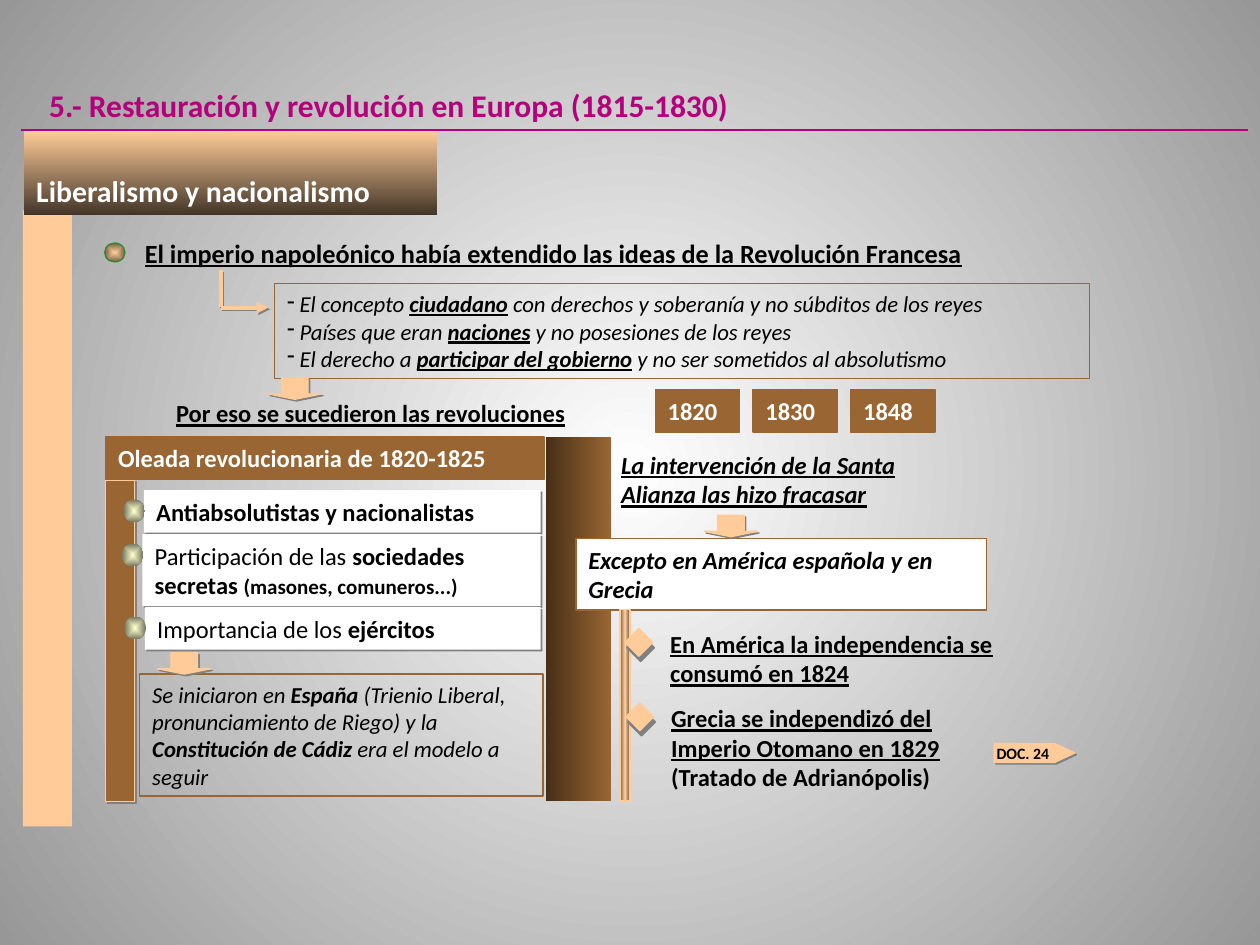
from lxml import etree
from pptx import Presentation
from pptx.dml.color import RGBColor
from pptx.enum.shapes import MSO_CONNECTOR, MSO_SHAPE
from pptx.enum.text import MSO_ANCHOR, PP_ALIGN
from pptx.oxml.ns import qn
from pptx.util import Cm, Pt

RECT, OVAL, DIAMOND = MSO_SHAPE.RECTANGLE, MSO_SHAPE.OVAL, MSO_SHAPE.DIAMOND
DOWN_ARROW, PENTAGON = MSO_SHAPE.DOWN_ARROW, MSO_SHAPE.PENTAGON
STRAIGHT = MSO_CONNECTOR.STRAIGHT
TOP, BOTTOM, LEFT = MSO_ANCHOR.TOP, MSO_ANCHOR.BOTTOM, PP_ALIGN.LEFT

COLORS = {
    "black": "000000", "white": "FFFFFF", "gray": "979797", "shadow": "808080",
    "peach": "FFCC99", "brown": "996633", "magenta": "B4007C", "green": "2E8A2E",
    "cream": "FFFFCC", "olive": "75755E", "tan": "755E46", "coffee": "423528",
    "umber": "462F17",
}
SOFT = (1.4, 45)
DEEP = (3.2, 72)


def add(parent, tag, **attributes):
    """Append a child element with the given attributes."""
    return etree.SubElement(parent, qn(tag), {key: str(value) for key, value in attributes.items()})


class SlideBuilder:
    """Draw styled elements on the current slide."""

    font_name = "Calibri"

    def __init__(self, slide):
        self.slide = slide

    def color(self, name):
        """Return the named colour."""
        return RGBColor.from_string(COLORS[name])

    def gradient(self, fill, holder, names, angle=None, shade="shape"):
        """Fill with evenly spaced stops, linear or from the centre."""
        fill.gradient()
        grad = next(holder.iter(qn("a:gradFill")))
        for child in list(grad):
            grad.remove(child)
        stops = add(grad, "a:gsLst")
        for index, name in enumerate(names):
            stop = add(stops, "a:gs", pos=100000 * index // (len(names) - 1))
            add(stop, "a:srgbClr", val=COLORS[name])
        if angle is None:
            center = add(grad, "a:path", path=shade)
            add(center, "a:fillToRect", l=50000, t=50000, r=50000, b=50000)
        else:
            add(grad, "a:lin", ang=angle * 60000, scaled=0)

    def background(self, *names):
        """Fill the slide with a round gradient."""
        self.gradient(self.slide.background.fill, self.slide.element, names, shade="circle")

    def cast_shadow(self, effects, shadow):
        """Add a hard shadow with a distance and an angle."""
        distance, angle = shadow
        outer = add(effects, "a:outerShdw", blurRad=0, dist=int(Pt(distance)),
                    dir=angle * 60000, algn="ctr", rotWithShape=0)
        add(outer, "a:srgbClr", val=COLORS["shadow"])

    def shape(self, kind, left, top, width, height, fill=None, line=None, shadow=None, angle=None):
        """Draw a preset shape; a tuple of colours makes a gradient."""
        shape = self.slide.shapes.add_shape(kind, Cm(left), Cm(top), Cm(width), Cm(height))
        properties = shape.element.spPr
        if fill is None:
            shape.fill.background()
        elif isinstance(fill, tuple):
            self.gradient(shape.fill, properties, fill, angle)
        else:
            shape.fill.solid()
            shape.fill.fore_color.rgb = self.color(fill)
        if line:
            shape.line.color.rgb = self.color(line)
            shape.line.width = Pt(0.75)
        else:
            shape.line.fill.background()
        shape.shadow.inherit = False
        if shadow:
            self.cast_shadow(properties.find(qn("a:effectLst")), shadow)
        return shape

    def line(self, start, end, color, width, arrow=False, shadow=None):
        """Draw a straight line."""
        points = [Cm(value) for value in (*start, *end)]
        line = self.slide.shapes.add_connector(STRAIGHT, *points)
        line.line.color.rgb = self.color(color)
        line.line.width = Pt(width)
        properties = line.element.spPr
        if arrow:
            add(properties.find(qn("a:ln")), "a:tailEnd", type="triangle")
        effects = add(properties, "a:effectLst")
        if shadow:
            self.cast_shadow(effects, shadow)

    def text(self, left, top, width, height, content, size, style="b", color="black"):
        """Place a text box."""
        box = self.slide.shapes.add_textbox(Cm(left), Cm(top), Cm(width), Cm(height))
        self.fill_text(box, [content], size, style, color)

    def fill_text(self, box, paragraphs, size, style="", color="black", anchor=TOP, dash=False):
        """Set paragraphs, each a string or a list of (text, style, size) spans."""
        frame = box.text_frame
        frame.word_wrap = True
        frame.vertical_anchor = anchor
        frame.margin_left, frame.margin_right = Cm(0.25), Cm(0.05)
        frame.margin_top = frame.margin_bottom = Cm(0.13)
        for index, content in enumerate(paragraphs):
            para = frame.add_paragraph() if index else frame.paragraphs[0]
            para.alignment = LEFT
            font = para.font
            font.name, font.size = self.font_name, Pt(size)
            font.color.rgb = self.color(color)
            self.emphasize(font, style)
            if dash:
                indent = font._element.getparent()
                indent.set("marL", str(int(Cm(0.25))))
                indent.set("indent", str(-int(Cm(0.25))))
                indent.insert(0, etree.Element(qn("a:buChar"), {"char": "-"}))
            spans = [(content, "")] if isinstance(content, str) else content
            for words, emphasis, *own_size in spans:
                span = para.add_run()
                span.text = words
                self.emphasize(span.font, emphasis)
                if own_size:
                    span.font.size = Pt(own_size[0])

    def emphasize(self, font, style):
        """Apply b, i and u to a font."""
        if "b" in style:
            font.bold = True
        if "i" in style:
            font.italic = True
        if "u" in style:
            font.underline = True


def main():
    """Build the slide and save it."""
    deck = Presentation()
    deck.slide_width, deck.slide_height = Cm(25.4), Cm(19.05)
    page = SlideBuilder(deck.slides.add_slide(deck.slide_layouts[6]))
    page.background("white", "gray")

    page.shape(RECT, 0.46, 4.24, 0.99, 12.42, "peach")
    topic = page.shape(RECT, 0.48, 2.64, 8.33, 1.7, ("peach", "coffee"), angle=90)
    page.fill_text(topic, ["Liberalismo y nacionalismo"], 17, "b", "white", BOTTOM)
    page.line((0.43, 2.62), (25.15, 2.62), "magenta", 0.75)
    page.text(0.74, 1.6, 17.09, 1.02,
              "5.- Restauración y revolución en Europa (1815-1830)", 18, "b", "magenta")

    page.shape(OVAL, 2.11, 4.9, 0.41, 0.38, ("peach", "tan"), "green")
    page.text(2.67, 4.65, 19.69, 0.89,
              "El imperio napoleónico había extendido las ideas de la Revolución Francesa", 15, "bu")
    ideas = page.shape(RECT, 5.54, 5.72, 16.43, 1.91, line="brown")
    page.fill_text(ideas, [
        [("El concepto ", ""), ("ciudadano", "bu"),
         (" con derechos y soberanía y no súbditos de los reyes", "")],
        [("Países que eran ", ""), ("naciones", "bu"), (" y no posesiones de los reyes", "")],
        [("El derecho a ", ""), ("participar del gobierno", "bu"),
         (" y no ser sometidos al absolutismo", "")],
    ], 13, "i", dash=True)
    page.line((4.45, 5.44), (4.45, 6.18), "peach", 2.25, shadow=SOFT)
    page.line((4.45, 6.2), (5.41, 6.2), "peach", 2.25, arrow=True, shadow=SOFT)
    page.text(3.3, 7.9, 9.6, 0.86, "Por eso se sucedieron las revoluciones", 14, "bu")
    for index, year in enumerate(("1820", "1830", "1848")):
        tile = page.shape(RECT, 13.21 + 1.97 * index, 7.85, 1.7, 0.86, "brown", "brown")
        page.fill_text(tile, [year], 14, "b", "white")

    page.shape(RECT, 2.13, 9.68, 0.58, 6.48, "brown", "peach", SOFT)
    wave = page.shape(RECT, 2.13, 8.81, 8.84, 0.86, "brown", "brown")
    page.fill_text(wave, ["Oleada revolucionaria de 1820-1825"], 14, "b", "white")
    features = (
        (2.9, 9.88, 0.86, [("Antiabsolutistas y nacionalistas", "b")]),
        (2.87, 10.77, 1.45, [("Participación de las", ""), (" sociedades secretas ", "b"),
                             ("(masones, comuneros...)", "b", 12)]),
        (2.92, 12.24, 0.86, [("Importancia de los", ""), (" ejércitos", "b")]),
    )
    for left, top, height, spans in features:
        panel = page.shape(RECT, left, top, 10.9 - left, height, "white", shadow=SOFT)
        page.fill_text(panel, [spans], 14)
        page.shape(OVAL, left - 0.41, top + 0.19, 0.43, 0.46, ("cream", "olive"))
    spain = page.shape(RECT, 2.82, 13.59, 8.13, 2.46, line="brown")
    page.fill_text(spain, [[
        ("Se iniciaron en ", ""), ("España ", "b"),
        ("(Trienio Liberal, pronunciamiento de Riego) y la ", ""),
        ("Constitución de Cádiz", "b"), (" era el modelo a seguir", ""),
    ]], 13, "i")

    page.text(12.27, 8.94, 7.01, 1.45,
              "La intervención de la Santa Alianza las hizo fracasar", 14, "biu")
    page.shape(RECT, 11, 8.81, 1.32, 7.34, ("brown", "umber"), angle=180)
    exception = page.shape(RECT, 11.61, 10.85, 8.28, 1.45, "white", "brown")
    page.fill_text(exception, ["Excepto en América española y en Grecia"], 14, "bi")
    for left, top in ((5.41, 7.62), (3.18, 13.16), (14.2, 10.39)):
        page.shape(DOWN_ARROW, left, top, 1.07, 0.43, "peach", "peach", SOFT).adjustments[1] = 0.25

    page.shape(RECT, 12.5, 12.29, 0.2, 3.86, ("tan", "peach", "tan"), "peach", angle=180)
    outcomes = (
        (13.26, 12.55, 1.45, [("En América la independencia se consumó en 1824", "u")]),
        (13.28, 14.05, 2.03, [("Grecia se independizó del Imperio Otomano en 1829 ", "u"),
                              ("(Tratado de Adrianópolis)", "")]),
    )
    for left, top, height, spans in outcomes:
        page.text(left, top, 7.24, height, spans, 14)
        page.shape(DIAMOND, left - 0.66, top + 0.12, 0.56, 0.56, "peach", "peach", DEEP)

    page.shape(PENTAGON, 20.04, 14.99, 1.63, 0.38, "peach", "peach", SOFT).adjustments[0] = 1.07
    page.text(19.84, 14.86, 1.55, 0.64, "DOC. 24", 9)
    deck.save("out.pptx")


if __name__ == "__main__":
    main()
